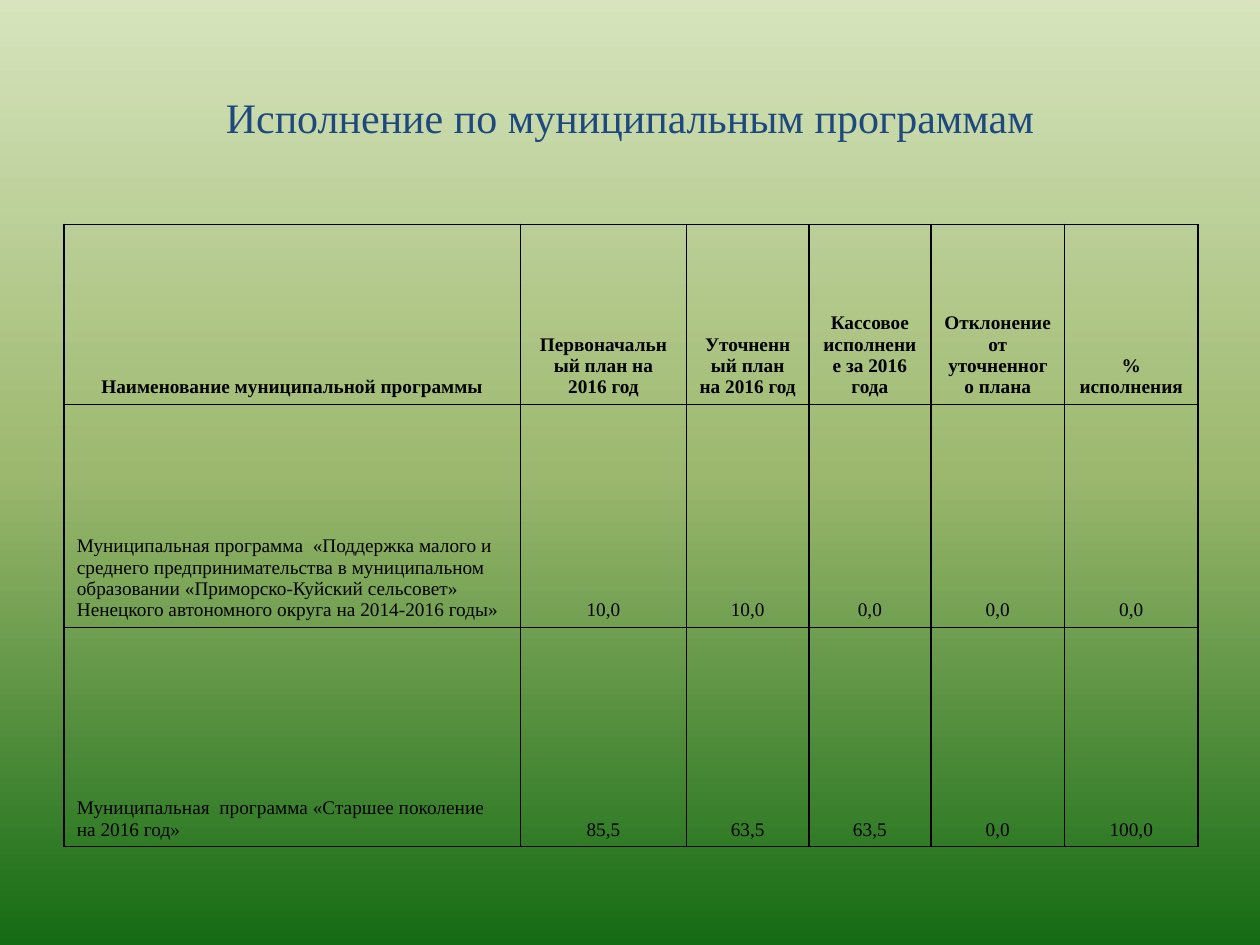
from copy import deepcopy
from dataclasses import dataclass
from typing import Any

from lxml import etree
from pptx import Presentation
from pptx import util as u
from pptx.dml.color import RGBColor
from pptx.enum import text
from pptx.oxml.ns import qn


@dataclass(frozen=True)
class Theme:
    font: str = "Times New Roman"
    title_size: float = 24
    table_size: float = 11
    border_width: float = 1
    title_color: str = "1F497D"
    table_color: str = "000000"
    gradient: tuple = ((0, "D7E4BD"), (0.5, "9CB86E"), (1, "156B13"))


@dataclass(frozen=True)
class Program:
    name: str
    values: tuple[str, ...]


THEME = Theme()
COLUMN_WIDTHS = (3.62, 1.32, 0.97, 0.97, 1.06, 1.06)
ROW_HEIGHTS = (1.43, 1.77, 1.74)
HEADER = Program(
    "Наименование муниципальной программы",
    (
        "Первоначальный план на 2016 год",
        "Уточненный план на 2016 год",
        "Кассовое исполнение за 2016 года",
        "Отклонение от уточненного плана",
        "% исполнения",
    ),
)
PROGRAMS = (
    Program(
        "Муниципальная программа  «Поддержка малого и среднего предпринимательства "
        "в муниципальном образовании «Приморско-Куйский сельсовет» "
        "Ненецкого автономного округа на 2014-2016 годы»",
        ("10,0", "10,0", "0,0", "0,0", "0,0"),
    ),
    Program(
        "Муниципальная  программа «Старшее поколение на 2016 год»",
        ("85,5", "63,5", "63,5", "0,0", "100,0"),
    ),
)


def apply_formats(target: Any, formats: dict[str, Any]) -> None:
    for name, value in formats.items():
        setattr(target, name, value)


def write_text(frame: Any, content: str, size: float, color: str,
               bold: bool = False, centered: bool = True) -> None:
    paragraph = frame.paragraphs[0]
    paragraph.alignment = text.PP_ALIGN.CENTER if centered else text.PP_ALIGN.LEFT
    run = paragraph.add_run()
    run.text = content
    apply_formats(run.font, {"name": THEME.font, "size": u.Pt(size), "bold": bold})
    run.font.color.rgb = RGBColor.from_string(color)


def paint_background(slide: Any) -> None:
    fill = slide.background.fill
    fill.gradient()
    fill.gradient_angle = 270
    stop_list = next(slide.element.iter(qn("a:gsLst")))
    while len(stop_list) < len(THEME.gradient):
        stop_list.append(deepcopy(stop_list[0]))
    for stop, (position, color) in zip(fill.gradient_stops, THEME.gradient):
        stop.position = position
        stop.color.rgb = RGBColor.from_string(color)


def add_borders(cell: Any) -> None:
    properties = cell._tc.get_or_add_tcPr()
    for index, side in enumerate(("lnL", "lnR", "lnT", "lnB")):
        line = etree.Element(qn(f"a:{side}"), w=str(u.Pt(THEME.border_width)))
        solid = etree.SubElement(line, qn("a:solidFill"))
        etree.SubElement(solid, qn("a:srgbClr"), val=THEME.table_color)
        properties.insert(index, line)


def add_title(slide: Any, content: str) -> None:
    box = slide.shapes.add_textbox(u.Inches(0.5), u.Inches(0.3), u.Inches(9), u.Inches(1.25))
    apply_formats(box.text_frame,
                  {"word_wrap": True, "vertical_anchor": text.MSO_ANCHOR.MIDDLE})
    write_text(box.text_frame, content, THEME.title_size, THEME.title_color)


def add_program_table(slide: Any, rows: tuple[Program, ...]) -> None:
    table = slide.shapes.add_table(
        len(rows), len(COLUMN_WIDTHS), u.Inches(0.51), u.Inches(1.78),
        u.Inches(sum(COLUMN_WIDTHS)), u.Inches(sum(ROW_HEIGHTS)),
    ).table
    apply_formats(table, {"first_row": False, "horz_banding": False})
    for column, width in zip(table.columns, COLUMN_WIDTHS):
        column.width = u.Inches(width)
    for row, height in zip(table.rows, ROW_HEIGHTS):
        row.height = u.Inches(height)

    for row_index, program in enumerate(rows):
        is_header = row_index == 0
        for column_index, content in enumerate((program.name, *program.values)):
            cell = table.cell(row_index, column_index)
            cell.vertical_anchor = text.MSO_ANCHOR.BOTTOM
            cell.fill.background()
            add_borders(cell)
            write_text(cell.text_frame, content, THEME.table_size, THEME.table_color,
                       bold=is_header, centered=is_header or column_index > 0)


def main() -> None:
    presentation = Presentation()
    apply_formats(presentation,
                  {"slide_width": u.Inches(10), "slide_height": u.Inches(7.5)})
    slide = presentation.slides.add_slide(presentation.slide_layouts[6])

    # Background, title and table of programs
    paint_background(slide)
    add_title(slide, "Исполнение по муниципальным программам")
    add_program_table(slide, (HEADER, *PROGRAMS))

    presentation.save("out.pptx")


if __name__ == "__main__":
    main()
